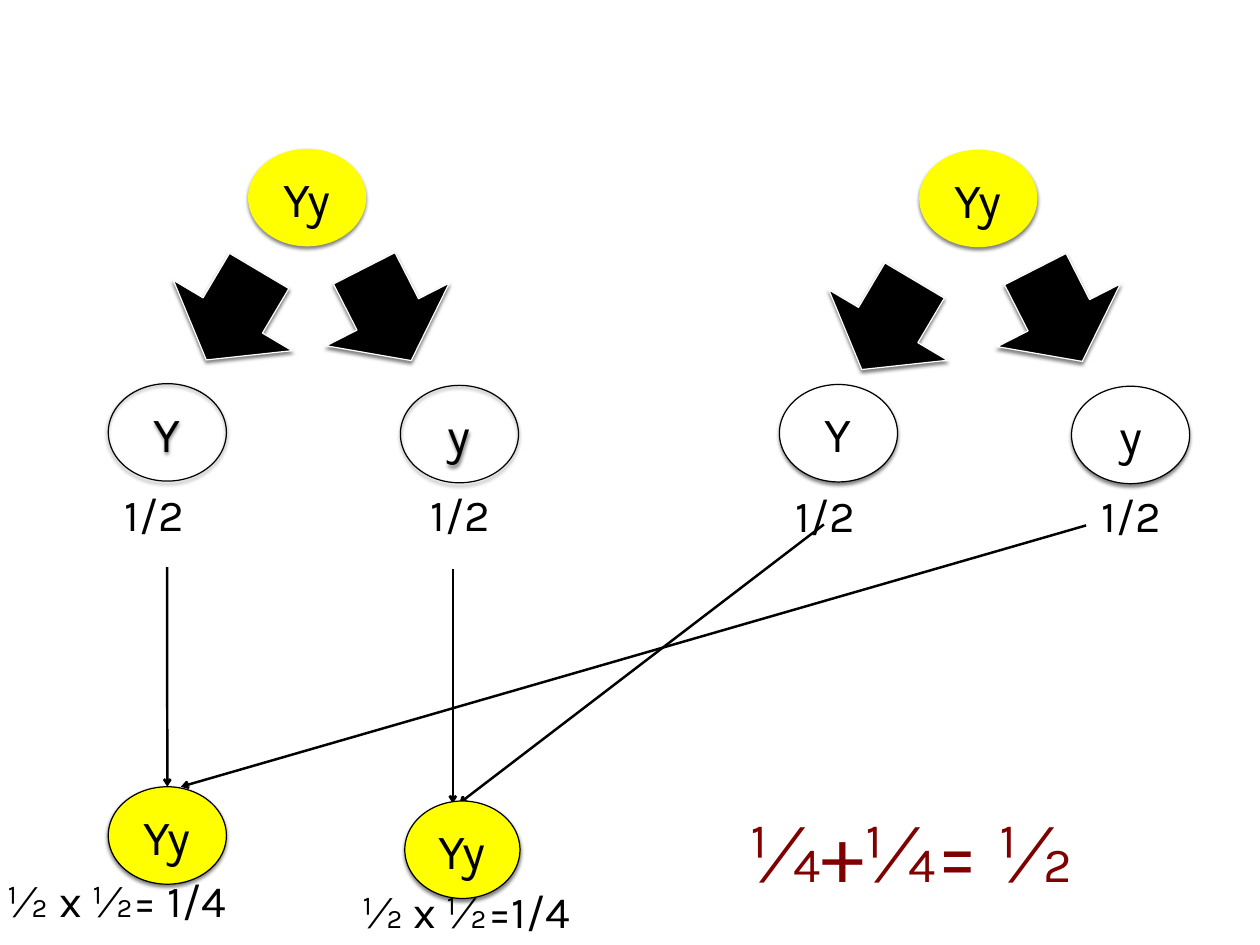
from dataclasses import dataclass
from typing import Optional

import lxml.etree
import pptx
import pptx.dml.color
import pptx.enum.shapes
import pptx.enum.text
import pptx.oxml.ns
import pptx.util

Pt = pptx.util.Pt
qn = pptx.oxml.ns.qn
COLORS = {"black": "000000", "white": "FFFFFF", "yellow": "FFFF00", "maroon": "800000"}
FONT = "Karla"


@dataclass
class Genotype:
    text: str
    left: float
    top: float
    fill: Optional[str] = None
    outline: Optional[str] = "black"
    width: float = 96


@dataclass
class BlockArrow:
    left: float
    top: float
    rotation: float


@dataclass
class Label:
    text: str
    left: float
    top: float
    width: float = 68.4
    height: float = 51.8
    size: float = 36
    color: str = "black"


@dataclass
class Path:
    start_x: float
    start_y: float
    end_x: float
    end_y: float


def rgb(name: str) -> pptx.dml.color.RGBColor:
    return pptx.dml.color.RGBColor.from_string(COLORS[name])


def add_shadow(shape) -> None:
    effects = lxml.etree.SubElement(shape._element.spPr, qn("a:effectLst"))
    shadow = lxml.etree.SubElement(
        effects, qn("a:outerShdw"), blurRad=str(Pt(3)), dist=str(Pt(2)),
        dir="5400000", rotWithShape="0")
    color = lxml.etree.SubElement(shadow, qn("a:srgbClr"), val=COLORS["black"])
    lxml.etree.SubElement(color, qn("a:alpha"), val="50000")


def paint(shape, fill: Optional[str], outline: Optional[str]) -> None:
    if fill:
        shape.fill.solid()
        shape.fill.fore_color.rgb = rgb(fill)
    else:
        shape.fill.background()
    if outline:
        shape.line.color.rgb = rgb(outline)
        shape.line.width = Pt(1)
    else:
        shape.line.fill.background()
    add_shadow(shape)


def write(shape, text: str, size: float, color: str, align) -> None:
    frame = shape.text_frame
    frame.margin_left = frame.margin_right = Pt(4)
    frame.margin_top = frame.margin_bottom = Pt(4)
    frame.vertical_anchor = pptx.enum.text.MSO_ANCHOR.MIDDLE
    para = frame.paragraphs[0]
    para.alignment = align
    span = para.add_run()
    span.text = text
    span.font.name = FONT
    span.font.size = Pt(size)
    span.font.color.rgb = rgb(color)


def draw_genotype(page, item: Genotype):
    oval = page.shapes.add_shape(
        pptx.enum.shapes.MSO_SHAPE.OVAL,
        Pt(item.left), Pt(item.top), Pt(item.width), Pt(79.2))
    paint(oval, item.fill, item.outline)
    write(oval, item.text, 40, "black", pptx.enum.text.PP_ALIGN.CENTER)
    oval.text_frame.word_wrap = True
    return oval


def draw_block_arrow(page, item: BlockArrow) -> None:
    arrow = page.shapes.add_shape(
        pptx.enum.shapes.MSO_SHAPE.RIGHT_ARROW,
        Pt(item.left), Pt(item.top), Pt(84.2), Pt(112.3))
    arrow.rotation = item.rotation
    paint(arrow, "black", "white")


def draw_label(page, item: Label) -> None:
    box = page.shapes.add_textbox(
        Pt(item.left), Pt(item.top), Pt(item.width), Pt(item.height))
    write(box, item.text, item.size, item.color, pptx.enum.text.PP_ALIGN.RIGHT)
    box.text_frame.word_wrap = False
    box.text_frame.auto_size = pptx.enum.text.MSO_AUTO_SIZE.SHAPE_TO_FIT_TEXT


def draw_path(page, item: Path):
    line = page.shapes.add_connector(
        pptx.enum.shapes.MSO_CONNECTOR.STRAIGHT,
        Pt(item.start_x), Pt(item.start_y), Pt(item.end_x), Pt(item.end_y))
    line.line.color.rgb = rgb("black")
    line.line.width = Pt(2)
    lxml.etree.SubElement(line.line._get_or_add_ln(), qn("a:tailEnd"), type="arrow")
    lxml.etree.SubElement(line._element.spPr, qn("a:effectLst"))
    return line


def draw_parent(page, x: float, y: float, gamete_fill: Optional[str],
                left_arrow: BlockArrow) -> None:
    for genotype in (
        Genotype("Yy", x + 201.6, y + 121, "yellow", None),
        Genotype("Y", x + 88, y + 311.8, gamete_fill),
        Genotype("y", x + 325.4, y + 313.2, gamete_fill),
    ):
        draw_genotype(page, genotype)
    draw_block_arrow(page, BlockArrow(x + 273, y + 199.4, 63))
    draw_block_arrow(page, left_arrow)
    for left in (85, 334):
        draw_label(page, Label("1/2", x + left, y + 391.7))


def main() -> None:
    deck = pptx.Presentation()
    deck.slide_width, deck.slide_height = Pt(1024), Pt(768)
    page = deck.slides.add_slide(deck.slide_layouts[6])

    draw_parent(page, 0, 0, None, BlockArrow(147, 200.2, 120.7))
    draw_parent(page, 545.4, 0.7, "white", BlockArrow(679.7, 208, 120.7))

    first_line = draw_path(page, Path(135.8, 460.8, 135.8, 639.4))
    for line in (
        Path(882.7, 427, 147, 639.4),
        Path(368, 462.2, 368, 653),
        Path(669.6, 426.2, 373, 653),
    ):
        draw_path(page, line)

    first_child = draw_genotype(page, Genotype("Yy", 88, 639.4, "yellow"))
    first_line.end_connect(first_child, 0)
    draw_genotype(page, Genotype("Yy", 329, 651, "yellow", width=93.6))

    for label in (
        Label("½ x ½= 1/4", 0, 705, 188),
        Label("½ x ½=1/4", 268.6, 714.2, 198.7),
        Label("¼+¼= ½", 577.4, 646.6, 299.5, 88, 66, "maroon"),
    ):
        draw_label(page, label)

    deck.save("out.pptx")


if __name__ == "__main__":
    main()
